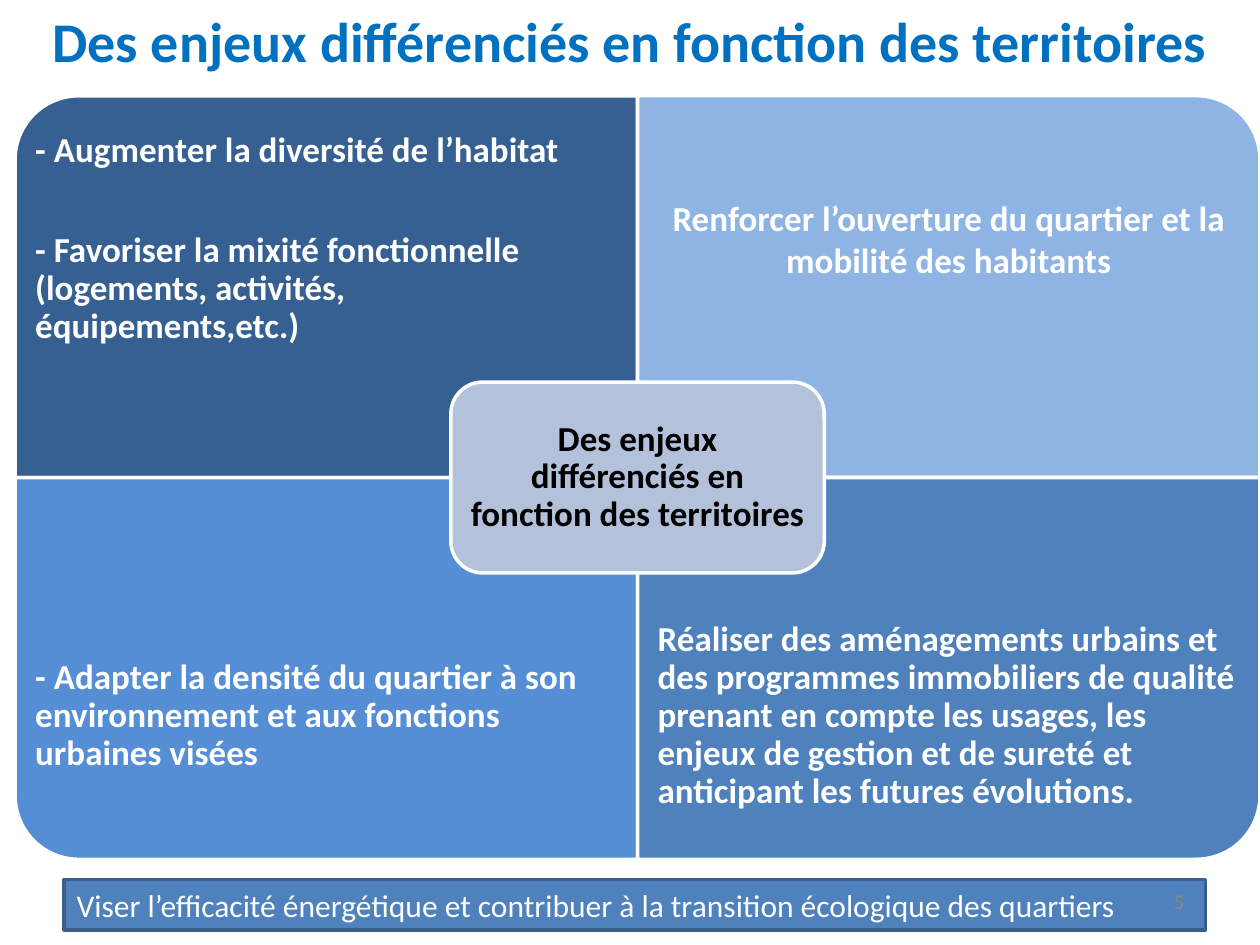
from dataclasses import dataclass

from pptx import Presentation
from pptx.dml.color import RGBColor
from pptx.enum.shapes import MSO_SHAPE
from pptx.enum.text import MSO_ANCHOR, PP_ALIGN
from pptx.util import Inches, Pt

ROUND, CORNER, RECT = (MSO_SHAPE.ROUNDED_RECTANGLE,
                       MSO_SHAPE.ROUND_1_RECTANGLE, MSO_SHAPE.RECTANGLE)
LEFT, CENTER, RIGHT = PP_ALIGN.LEFT, PP_ALIGN.CENTER, PP_ALIGN.RIGHT
TOP, MIDDLE = MSO_ANCHOR.TOP, MSO_ANCHOR.MIDDLE


@dataclass(frozen=True)
class Theme:
    """Colours, font and type sizes of the slide."""
    font: str = "Calibri"
    white: str = "FFFFFF"
    black: str = "000000"
    title: str = "0070C0"
    grey: str = "898989"
    hub: str = "B3C1DB"
    bar: str = "4F81BD"
    edge: str = "3A5F8C"
    quads: tuple = ("376092", "8EB4E3", "558ED5", "4F81BD")
    head: int = 32
    body: int = 20
    foot: int = 18
    small: int = 12
    line: int = 2


THEME = Theme()
QUADS = [
    (["- Augmenter la diversité de l’habitat",
      "- Favoriser la mixité fonctionnelle (logements, activités, "
      "équipements,etc.)"], 270, LEFT, 0.9),
    (["Renforcer l’ouverture du quartier et la mobilité des habitants"],
     0, CENTER, 1),
    (["- Adapter la densité du quartier à son environnement et aux "
      "fonctions urbaines visées"], 180, LEFT, 0.9),
    (["Réaliser des aménagements urbains et des programmes immobiliers de "
      "qualité prenant en compte les usages, les enjeux de gestion et de "
      "sureté et anticipant les futures évolutions."], 90, LEFT, 0.9),
]


def write(shape, texts, size, color, bold=True, align=LEFT, anchor=MIDDLE,
          inset=None, space=1, after=0):
    """Fill a shape with styled paragraphs."""
    frame = shape.text_frame
    frame.word_wrap = True
    frame.vertical_anchor = anchor
    if inset is not None:
        frame.margin_left = frame.margin_right = Inches(inset)
        frame.margin_top = frame.margin_bottom = Inches(inset)
    for i, text in enumerate(texts):
        para = frame.add_paragraph() if i else frame.paragraphs[0]
        para.alignment = align
        para.line_spacing = space
        para.space_after = Pt(after)
        run = para.add_run()
        run.text = text
        font = run.font
        font.name, font.size, font.bold = THEME.font, Pt(size), bold
        font.color.rgb = RGBColor.from_string(color)


def add_text(slide, box, texts, size, color, **style):
    """Add a text box."""
    shape = slide.shapes.add_textbox(*map(Inches, box))
    write(shape, texts, size, color, **style)


def add_block(slide, kind, box, fill, edge, turn=0):
    """Add an outlined shape that covers the box after its turn."""
    x, y, w, h = box
    if turn % 180:
        x, y, w, h = x + (w - h) / 2, y + (h - w) / 2, h, w
    shape = slide.shapes.add_shape(kind, *map(Inches, (x, y, w, h)))
    shape.rotation = turn
    shape.shadow.inherit = False
    shape.fill.solid()
    shape.fill.fore_color.rgb = RGBColor.from_string(fill)
    shape.line.color.rgb = RGBColor.from_string(edge)
    shape.line.width = Pt(THEME.line)
    return shape


def add_matrix(slide, box):
    """Draw four quarters with a hub at their centre."""
    x, y, w, h = box
    wide, high = w / 2, h / 2
    for i, (texts, turn, align, space) in enumerate(QUADS):
        row, col = divmod(i, 2)
        left, top = x + col * wide, y + row * high
        add_block(slide, CORNER, (left, top, wide, high), THEME.quads[i],
                  THEME.white, turn)
        add_text(slide, (left, top + row * high / 4, wide, high * 3 / 4),
                 texts, THEME.body, THEME.white, align=align, inset=0.16,
                 space=space, after=36)
    hub_w, hub_h = wide * 0.6, high / 2
    hub = add_block(slide, ROUND,
                    (x + wide - hub_w / 2, y + high - hub_h / 2, hub_w, hub_h),
                    THEME.hub, THEME.white)
    write(hub, ["Des enjeux différenciés en fonction des territoires"],
          THEME.body, THEME.black, align=CENTER, inset=0.08, space=0.9)


def add_title(slide, box):
    """Write the slide title."""
    add_text(slide, box,
             ["Des enjeux différenciés en fonction des territoires"],
             THEME.head, THEME.title, align=CENTER, anchor=TOP)


def add_foot(slide, box):
    """Draw the bottom bar and the page number."""
    x, y, w, h = box
    bar = add_block(slide, RECT, box, THEME.bar, THEME.edge)
    write(bar, ["Viser l’efficacité énergétique et contribuer à la transition "
                "écologique des quartiers"],
          THEME.foot, THEME.white, bold=False, anchor=TOP)
    add_text(slide, (x + w - 0.57, y - 0.03, 0.5, h), ["5"], THEME.small,
             THEME.grey, bold=False, align=RIGHT)


def main():
    """Build and save the slide."""
    deck = Presentation()
    deck.slide_width, deck.slide_height = Inches(10), Inches(7.5)
    slide = deck.slides.add_slide(deck.slide_layouts[6])
    add_matrix(slide, (0.12, 0.76, 9.88, 6.06))
    add_foot(slide, (0.51, 6.98, 9.06, 0.4))
    add_title(slide, (0, 0, 10, 0.99))
    deck.save("out.pptx")


if __name__ == "__main__":
    main()
